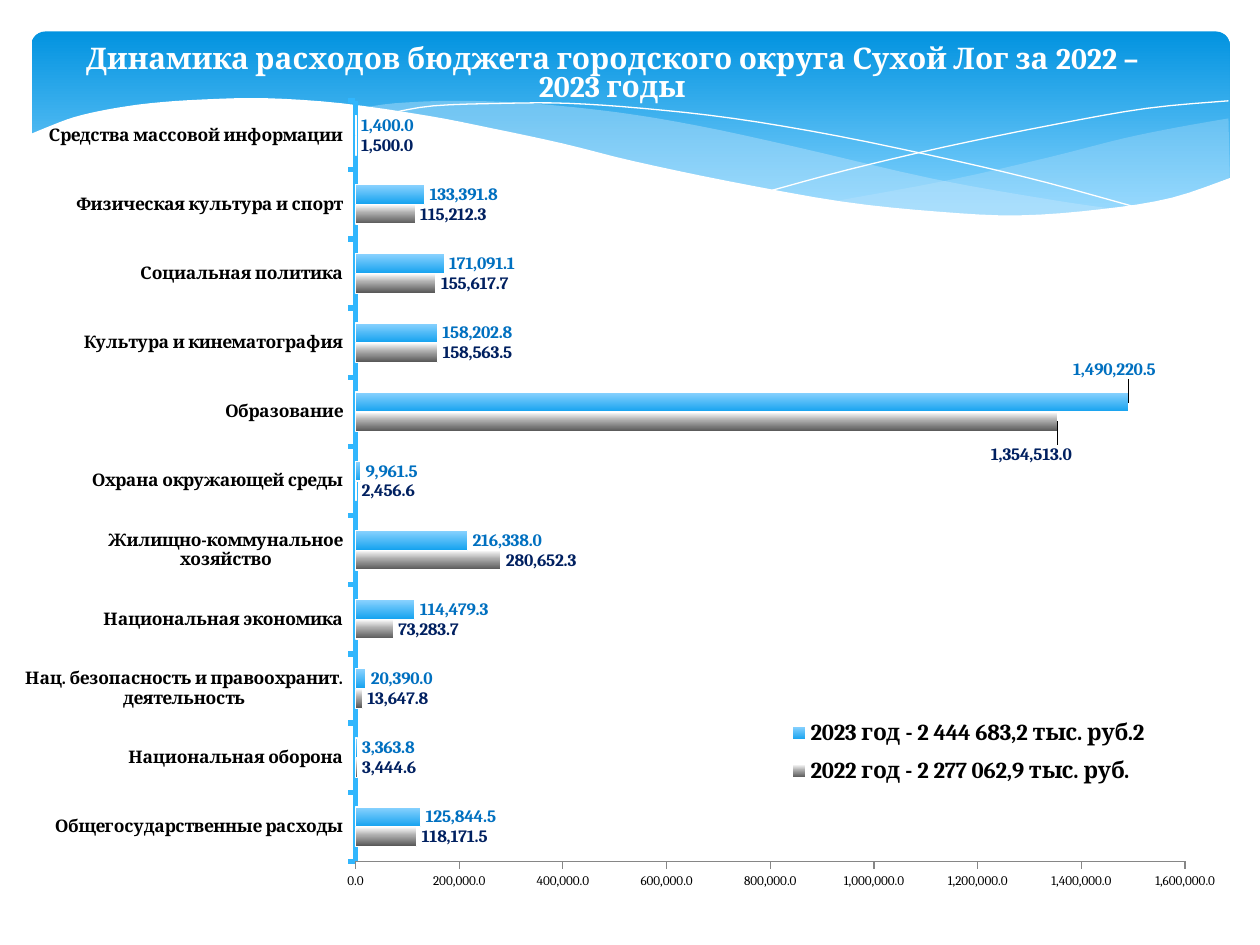
import copy
import dataclasses

import pptx
import pptx.chart.data
import pptx.dml.color
import pptx.dml.fill
import pptx.enum.chart
import pptx.enum.shapes
import pptx.enum.text
import pptx.oxml
import pptx.oxml.ns
import pptx.util

COLUMNS, ROWS = 1000, 750
CELL = pptx.util.Inches(0.01)
SERIF = "Cambria"
NUMBER_FORMAT = "#,##0.0"
TITLE = "Динамика расходов бюджета городского округа Сухой Лог за 2022 – 2023 годы"

Points = list[tuple[float, float]]
Stops = list[tuple[float, str]]


@dataclasses.dataclass
class Area:
    column: float
    row: float
    columns: float
    rows: float

    def emu(self) -> list[int]:
        return [round(n * CELL) for n in (self.column, self.row, self.columns, self.rows)]


@dataclasses.dataclass
class Ribbon:
    edges: list[Points]
    fill: str | None = None
    opacity: int = 100


@dataclasses.dataclass
class Year:
    name: str
    values: list[float]
    stops: Stops
    label_color: str
    education_shift: tuple[float, float]


RIBBONS = [
    Ribbon([[(975, 94), (935, 101), (891, 110), (832, 125), (753, 143), (661, 160)],
            [(661, 160), (719, 167), (769, 171), (814, 172), (863, 170),
             (905, 163), (942, 154), (976, 141)]], "C6E7FC", 29),
    Ribbon([[(893, 167), (837, 159), (741, 142), (629, 116), (555, 100), (489, 89),
             (420, 82), (361, 80), (313, 82), (286, 86)],
            [(286, 86), (342, 94), (404, 106), (491, 126), (566, 143), (634, 156),
             (695, 165), (748, 170), (796, 173), (848, 172), (893, 167)]], "C6E7FC", 40),
    Ribbon([[(309, 90), (344, 84), (401, 82), (450, 82), (510, 86), (582, 94),
             (665, 108), (760, 128), (831, 145), (907, 166)]]),
    Ribbon([[(613, 151), (672, 135), (748, 117), (836, 99), (910, 86), (975, 80)]]),
    Ribbon([[(977, 141), (930, 157), (875, 166), (809, 171), (744, 168), (668, 160),
             (579, 144), (503, 128), (447, 114), (391, 102), (340, 92), (271, 82),
             (211, 78), (161, 79), (119, 82), (85, 87), (59, 93), (40, 100), (23, 107)],
            [(23, 224), (977, 224)]], "FFFFFF"),
]

CATEGORIES = [
    "Общегосударственные расходы", "Национальная оборона",
    "Нац. безопасность и правоохранит. деятельность", "Национальная экономика",
    "Жилищно-коммунальное хозяйство", "Охрана окружающей среды", "Образование",
    "Культура и кинематография", "Социальная политика",
    "Физическая культура и спорт", "Средства массовой информации",
]
YEARS = [
    Year("2022 год - 2 277 062,9 тыс. руб.",
         [118171.5, 3444.6, 13647.8, 73283.7, 280652.3, 2456.6, 1354513,
          158563.5, 155617.7, 115212.3, 1500],
         [(0, "FFFFFF"), (0.44, "ABABAB"), (1, "545454")], "002060", (-0.06, 0.04)),
    Year("2023 год - 2 444 683,2 тыс. руб.2",
         [125844.5, 3363.8, 20390, 114479.3, 216338, 9961.5, 1490220.5,
          158202.8, 171091.1, 133391.8, 1400],
         [(0, "8CD3FF"), (1, "14A2EF")], "0070C0", (-0.05, -0.04)),
]


def color(value: str) -> pptx.dml.color.RGBColor:
    return pptx.dml.color.RGBColor.from_string(value)


def style_font(font, size: float, value: str, bold: bool = False, name: str = SERIF) -> None:
    font.size, font.bold, font.name = pptx.util.Pt(size), bold, name
    font.color.rgb = color(value)


def fill_gradient(fill: pptx.dml.fill.FillFormat, element, stops: Stops) -> None:
    fill.gradient()
    fill.gradient_angle = 270
    stop_list = element.xpath(".//a:gsLst")[0]
    for _ in stops[2:]:
        stop_list.append(copy.deepcopy(stop_list[-1]))
    for stop, (position, value) in zip(fill.gradient_stops, stops):
        stop.position = position
        stop.color.rgb = color(value)


def smooth(points: Points, steps: int = 4) -> Points:
    padded = [points[0], *points, points[-1]]
    result = [points[0]]
    for a, b, c, d in zip(padded, padded[1:], padded[2:], padded[3:]):
        for step in range(1, steps + 1):
            t = step / steps
            result.append(tuple(
                (2 * q + (r - p) * t + (2 * p - 5 * q + 4 * r - s) * t ** 2
                 + (3 * q - p - 3 * r + s) * t ** 3) / 2
                for p, q, r, s in zip(a, b, c, d)))
    return result


def draw_ribbon(page, ribbon: Ribbon) -> None:
    outline = [(x * CELL, y * CELL) for edge in ribbon.edges
               for x, y in (smooth(edge) if len(edge) > 2 else edge)]
    builder = page.shapes.build_freeform(*outline[0], scale=1.0)
    builder.add_line_segments(outline[1:], close=ribbon.fill is not None)
    shape = builder.convert_to_shape()
    shape.shadow.inherit = False
    if ribbon.fill is None:
        shape.fill.background()
        shape.line.color.rgb = color("FFFFFF")
        shape.line.width = pptx.util.Pt(0)
        return
    shape.line.fill.background()
    shape.fill.solid()
    shape.fill.fore_color.rgb = color(ribbon.fill)
    if ribbon.opacity < 100:
        tint = shape._element.xpath("./p:spPr/a:solidFill/a:srgbClr")[0]
        alpha = pptx.oxml.parse_xml(
            f'<a:alpha {pptx.oxml.ns.nsdecls("a")} val="{ribbon.opacity * 1000}"/>')
        tint.append(alpha)


def draw_banner(page, area: Area) -> None:
    banner = page.shapes.add_shape(
        pptx.enum.shapes.MSO_SHAPE.ROUNDED_RECTANGLE, *area.emu())
    banner.adjustments[0] = 0.07
    banner.shadow.inherit = False
    banner.line.fill.background()
    fill_gradient(banner.fill, banner._element, [(0, "0293E0"), (0.9, "83D3FE")])


def draw_title(page, area: Area) -> None:
    box = page.shapes.add_textbox(*area.emu())
    frame = box.text_frame
    frame.word_wrap = True
    frame.margin_left = frame.margin_right = 20 * CELL
    frame.margin_top, frame.margin_bottom = 16 * CELL, 0
    frame.text = TITLE
    para = frame.paragraphs[0]
    para.alignment = pptx.enum.text.PP_ALIGN.CENTER
    para.line_spacing = 0.8
    style_font(para.runs[0].font, 17, "FFFFFF", True)


def place(parent, index: int, numbers: dict[str, float], modes: str = "") -> None:
    for old in parent.xpath("./c:layout"):
        parent.remove(old)
    values = "".join(f'<c:{key} val="{value}"/>' for key, value in numbers.items())
    parent.insert(index, pptx.oxml.parse_xml(
        f'<c:layout {pptx.oxml.ns.nsdecls("c")}><c:manualLayout>{modes}{values}'
        "</c:manualLayout></c:layout>"))


def style_series(series, year: Year) -> None:
    fill_gradient(series.format.fill, series._element, year.stops)
    series.format.line.color.rgb = color("FFFFFF")
    series.format.line.width = pptx.util.Pt(0.75)
    labels = series.data_labels
    labels.show_value = True
    labels.number_format, labels.number_format_is_linked = NUMBER_FORMAT, False
    labels.position = pptx.enum.chart.XL_LABEL_POSITION.OUTSIDE_END
    style_font(labels.font, 10, year.label_color, True)
    education = CATEGORIES.index("Образование")
    label = series.points[education].data_label
    style_font(label.font, 10, year.label_color, True)
    label.position = pptx.enum.chart.XL_LABEL_POSITION.OUTSIDE_END
    place(series._element.xpath("./c:dLbls/c:dLbl")[0], 1,
          dict(zip("xy", year.education_shift)))


def draw_chart(page, area: Area) -> None:
    data = pptx.chart.data.CategoryChartData(number_format=NUMBER_FORMAT)
    data.categories = CATEGORIES
    for year in YEARS:
        data.add_series(year.name, year.values)
    chart = page.shapes.add_chart(
        pptx.enum.chart.XL_CHART_TYPE.BAR_CLUSTERED, *area.emu(), data).chart
    style_font(chart.font, 10, "000000", name="Cabin")
    chart.has_title = False
    plot = chart.plots[0]
    plot.gap_width, plot.overlap, plot.vary_by_categories = 150, 0, False
    for series, year in zip(plot.series, YEARS):
        style_series(series, year)
    names, amounts = chart.category_axis, chart.value_axis
    amounts.has_major_gridlines = False
    amounts.minimum_scale, amounts.maximum_scale, amounts.major_unit = 0, 1600000, 200000
    amounts.tick_labels.number_format = NUMBER_FORMAT
    amounts.tick_labels.number_format_is_linked = False
    for axis, size, bold, line, width in (
            (names, 10, True, "31B6FD", 3), (amounts, 7.5, False, "868686", 0.75)):
        style_font(axis.tick_labels.font, size, "000000", bold)
        axis.major_tick_mark = pptx.enum.chart.XL_TICK_MARK.OUTSIDE
        axis.format.line.color.rgb = color(line)
        axis.format.line.width = pptx.util.Pt(width)
    chart.has_legend = True
    legend = chart.legend
    legend.position = pptx.enum.chart.XL_LEGEND_POSITION.TOP
    legend.include_in_layout = False
    style_font(legend.font, 13, "000000", True)
    edges = '<c:xMode val="edge"/><c:yMode val="edge"/>'
    place(legend._element, 1, {"x": 0.63, "y": 0.78, "w": 0.31, "h": 0.11}, edges)
    place(chart._chartSpace.xpath(".//c:plotArea")[0], 0,
          {"x": 0.274, "y": 0.031, "w": 0.692, "h": 0.939},
          '<c:layoutTarget val="inner"/>' + edges)


def main() -> None:
    deck = pptx.Presentation()
    deck.slide_width, deck.slide_height = COLUMNS * CELL, ROWS * CELL
    page = deck.slides.add_slide(deck.slide_layouts[6])
    draw_banner(page, Area(25, 25, 951, 156))
    for ribbon in RIBBONS:
        draw_ribbon(page, ribbon)
    draw_title(page, Area(31, 21, 910, 50))
    draw_chart(page, Area(20, 60, 953, 646))
    deck.save("out.pptx")


if __name__ == "__main__":
    main()
